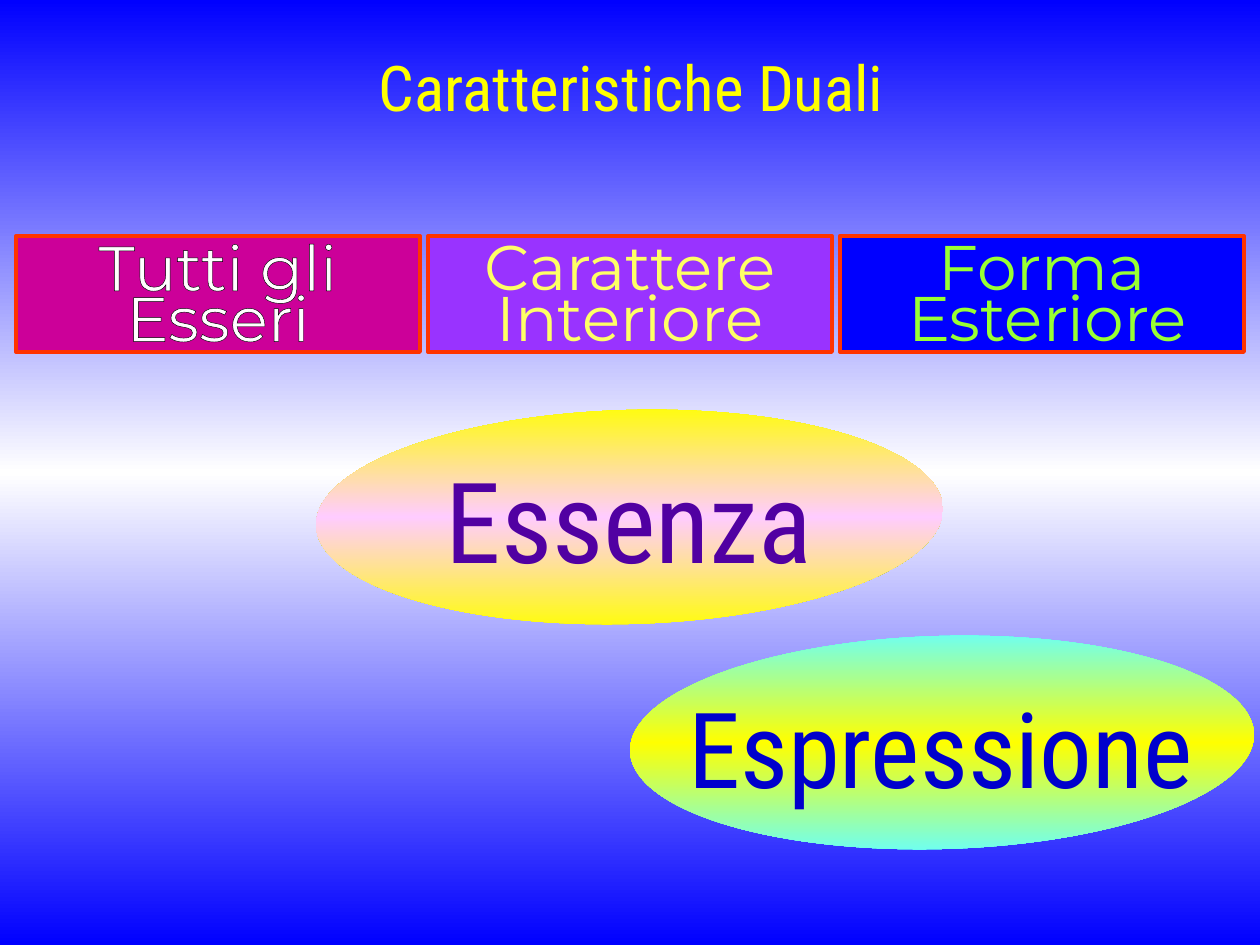
from copy import deepcopy

from lxml import etree
from pptx import Presentation
from pptx import util as u
from pptx.dml.color import RGBColor
from pptx.enum import shapes, text
from pptx.oxml.ns import qn

SCALE = 914400 / 126
BODY_FONT = "Montserrat"
HEAD_FONT = "Roboto Condensed"


def px(*lengths):
    return [u.Emu(round(length * SCALE)) for length in lengths]


def rgb(value):
    return RGBColor.from_string(value)


def fill_gradient(fill, element, outer, middle):
    fill.gradient()
    fill.gradient_angle = 270
    stop_list = element.find(".//" + qn("a:gsLst"))
    stop_list.insert(1, deepcopy(stop_list[0]))
    for stop, position, color in zip(fill.gradient_stops, (0, 0.5, 1), (outer, middle, outer)):
        stop.position = position
        stop.color.rgb = rgb(color)


def outline_text(span, color, width):
    line = etree.Element(qn("a:ln"), w=str(u.Pt(width)))
    solid = etree.SubElement(line, qn("a:solidFill"))
    etree.SubElement(solid, qn("a:srgbClr"), val=color)
    span.font._element.insert(0, line)


def style_para(para, font, size, color, outline=None):
    para.alignment = text.PP_ALIGN.CENTER
    for span in para.runs:
        span.font.name = font
        span.font.size = u.Pt(size)
        span.font.color.rgb = rgb(color)
        if outline:
            outline_text(span, *outline)


def add_label(parent, place, wording, size, color, outline=None, wrap=True):
    box = parent.add_textbox(*px(*place))
    frame = box.text_frame
    frame.text = wording
    frame.word_wrap = wrap
    style_para(frame.paragraphs[0], HEAD_FONT, size, color, outline)


def add_heading_box(page, left, wording, fill, color, indent):
    box = page.shapes.add_shape(shapes.MSO_SHAPE.RECTANGLE, *px(left, 236, 404, 116))
    box.shadow.inherit = False
    box.fill.solid()
    box.fill.fore_color.rgb = rgb(fill)
    box.line.color.rgb = rgb("FF3300")
    box.line.width = u.Pt(2.25)
    frame = box.text_frame
    frame.text = wording
    frame.word_wrap = False
    frame.vertical_anchor = text.MSO_ANCHOR.MIDDLE
    for para, spacing in zip(frame.paragraphs, (40, 29)):
        style_para(para, BODY_FONT, 36, color, ("000000", 0.25))
        para.line_spacing = u.Pt(spacing)
    if indent:
        frame.paragraphs[1]._p.get_or_add_pPr().set("marL", str(px(indent)[0]))


def add_oval(page, place, outer, middle, label_place, wording, size, color):
    group = page.shapes.add_group_shape()
    oval = group.shapes.add_shape(shapes.MSO_SHAPE.OVAL, *px(*place))
    oval.shadow.inherit = False
    oval.rotation = -1.6
    oval.line.fill.background()
    fill_gradient(oval.fill, oval.element, outer, middle)
    oval.element.find(".//" + qn("a:gradFill")).set("rotWithShape", "0")
    add_label(group.shapes, label_place, wording, size, color)


def main():
    deck = Presentation()
    deck.slide_width, deck.slide_height = px(1260, 945)
    page = deck.slides.add_slide(deck.slide_layouts[6])
    fill_gradient(page.background.fill, page.element, "0000FF", "FFFFFF")

    headings = [
        ("Tutti gli\nEsseri", "CC0099", "FFFFFF", 0),
        ("Carattere\nInteriore", "9933FF", "FFFF66", 0),
        ("Forma\nEsteriore", "0000FF", "99FF33", 11),
    ]
    for column, heading in enumerate(headings):
        add_heading_box(page, 16 + 412 * column, *heading)

    add_oval(page, (316, 410, 627, 214), "FFFF00", "FFCCFF",
             (413, 445, 432, 147), "Essenza", 64, "5100A2")
    add_oval(page, (630, 636, 624, 213), "66FFFF", "FFFF00",
             (641, 677, 599, 139), "Espressione", 60, "0000CC")
    add_label(page.shapes, (66, 42, 1131, 136), "Caratteristiche Duali", 36, "FFFF00",
              outline=("000099", 3), wrap=False)
    deck.save("out.pptx")


if __name__ == "__main__":
    main()
